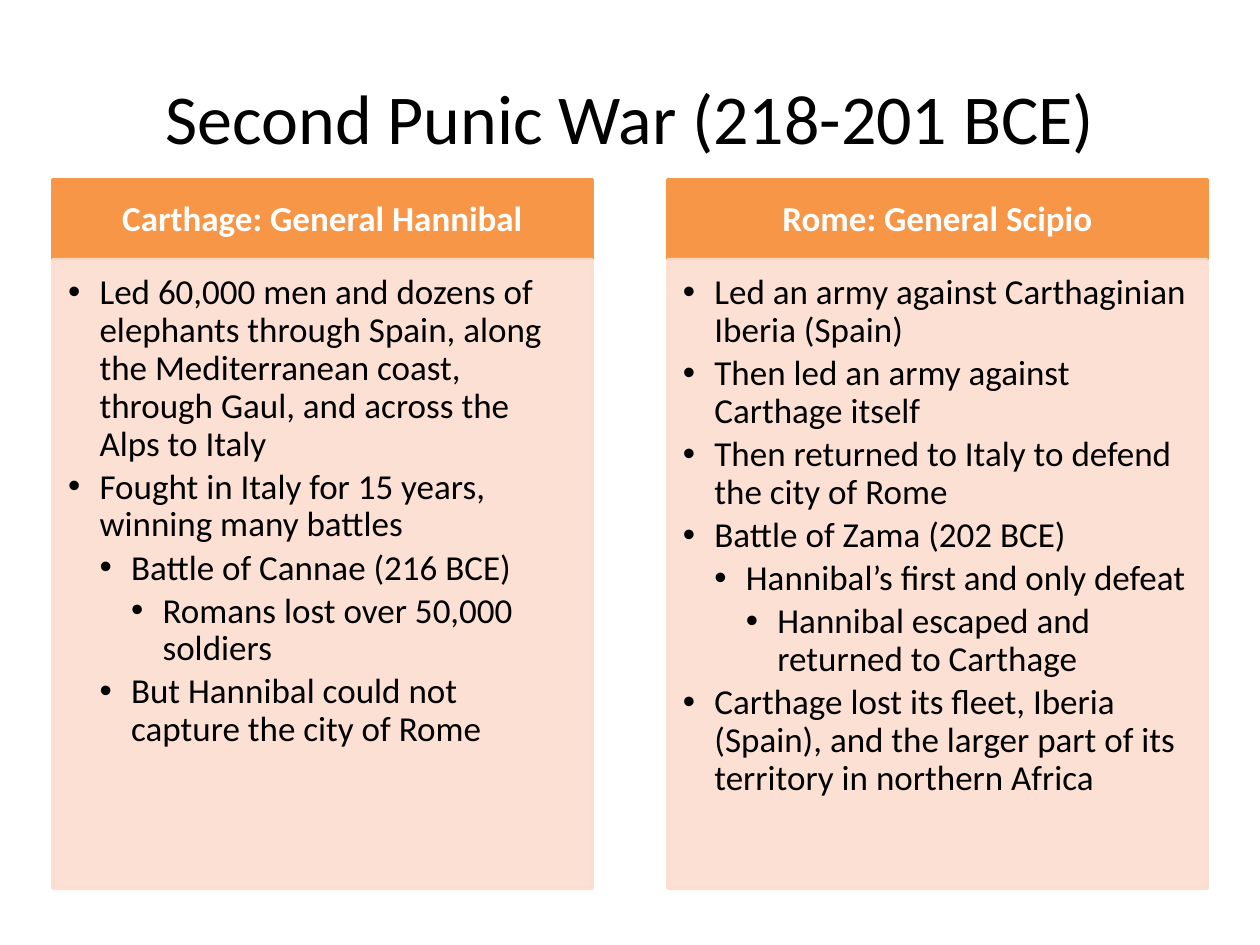
from dataclasses import dataclass

from lxml.etree import SubElement
from pptx import Presentation
from pptx.dml.color import RGBColor
from pptx.enum.text import MSO_ANCHOR, MSO_AUTO_SIZE, PP_ALIGN
from pptx.oxml.ns import qn
from pptx.util import Inches, Pt

COLORS = {"header": "F79646", "panel": "FCDDCF", "ink": "000000", "white": "FFFFFF"}
COLUMN_LEFT, COLUMN_PITCH, COLUMN_WIDTH = 0.42, 4.88, 4.28
HEADER_TOP, HEADER_HEIGHT, PANEL_HEIGHT = 1.43, 0.63, 4.99
INDENT = 0.25


@dataclass(frozen=True)
class Side:
    heading: str
    points: tuple[tuple[int, str], ...]  # (level, text)


SIDES = (
    Side("Carthage: General Hannibal", (
        (0, "Led 60,000 men and dozens of elephants through Spain, along the "
            "Mediterranean coast, through Gaul, and across the Alps to Italy"),
        (0, "Fought in Italy for 15 years, winning many battles"),
        (1, "Battle of Cannae (216 BCE)"),
        (2, "Romans lost over 50,000 soldiers"),
        (1, "But Hannibal could not capture the city of Rome"),
    )),
    Side("Rome: General Scipio", (
        (0, "Led an army against Carthaginian Iberia (Spain)"),
        (0, "Then led an army against Carthage itself"),
        (0, "Then returned to Italy to defend the city of Rome"),
        (0, "Battle of Zama (202 BCE)"),
        (1, "Hannibal’s first and only defeat"),
        (2, "Hannibal escaped and returned to Carthage"),
        (0, "Carthage lost its fleet, Iberia (Spain), and the larger part of "
            "its territory in northern Africa"),
    )),
)


def set_all(target, values: dict) -> None:
    for name, value in values.items():
        setattr(target, name, value)


def place(box, left: float, top: float, width: float, height: float) -> None:
    set_all(box, {"left": Inches(left), "top": Inches(top),
                  "width": Inches(width), "height": Inches(height)})


def set_frame(box, anchor: MSO_ANCHOR, margins: tuple[float, ...]) -> None:
    """Margins run left, top, right, bottom."""
    sides = ("margin_left", "margin_top", "margin_right", "margin_bottom")
    set_all(box.text_frame, {
        "auto_size": MSO_AUTO_SIZE.NONE, "word_wrap": True, "vertical_anchor": anchor,
        **{side: Inches(margin) for side, margin in zip(sides, margins)}})


def paint(box, color: str, opacity: int = 100) -> None:
    box.fill.solid()
    box.fill.fore_color.rgb = RGBColor.from_string(COLORS[color])
    box.line.color.rgb = RGBColor.from_string(COLORS[color])
    box.line.width = Pt(2)
    if opacity < 100:
        for tint in box._element.spPr.iter(qn("a:srgbClr")):
            SubElement(tint, qn("a:alpha"), val=str(opacity * 1000))


def write(para, text: str, size: int, color: str, bold: bool = False) -> None:
    span = para.add_run()
    span.text = text
    set_all(span.font, {"name": "Calibri", "size": Pt(size), "bold": bold})
    span.font.color.rgb = RGBColor.from_string(COLORS[color])


def add_bullet(para, level: int) -> None:
    properties = para._p.get_or_add_pPr()
    properties.set("marL", str(Inches(INDENT * (level + 1))))
    properties.set("indent", str(Inches(-INDENT)))
    SubElement(properties, qn("a:buFont"), typeface="Arial")
    SubElement(properties, qn("a:buChar"), char="•")


def draw_side(header, panel, side: Side, left: float) -> None:
    place(header, left, HEADER_TOP, COLUMN_WIDTH, HEADER_HEIGHT)
    paint(header, "header")
    set_frame(header, MSO_ANCHOR.MIDDLE, (0.16, 0.09, 0.16, 0.09))
    para = header.text_frame.paragraphs[0]
    set_all(para, {"alignment": PP_ALIGN.CENTER, "line_spacing": 0.9, "space_before": Pt(0)})
    write(para, side.heading, 20, "white", bold=True)

    place(panel, left, HEADER_TOP + HEADER_HEIGHT, COLUMN_WIDTH, PANEL_HEIGHT)
    paint(panel, "panel", opacity=90)
    set_frame(panel, MSO_ANCHOR.TOP, (0.12, 0.12, 0.16, 0.17))
    frame = panel.text_frame
    for number, (level, text) in enumerate(side.points):
        para = frame.add_paragraph() if number else frame.paragraphs[0]
        set_all(para, {"level": level, "line_spacing": 0.9,
                       "space_before": Pt(0), "space_after": Pt(3)})
        add_bullet(para, level)
        write(para, text, 20, "ink")


def main() -> None:
    deck = Presentation()
    set_all(deck, {"slide_width": Inches(10), "slide_height": Inches(7.5)})
    page = deck.slides.add_slide(deck.slide_layouts.get_by_name("Comparison"))

    title = page.shapes.title
    place(title, 0.5, 0.3, 9, 1.25)
    set_frame(title, MSO_ANCHOR.MIDDLE, (0.1, 0.05, 0.1, 0.05))
    para = title.text_frame.paragraphs[0]
    para.alignment = PP_ALIGN.CENTER
    write(para, "Second Punic War (218-201 BCE)", 40, "ink")

    for number, side in enumerate(SIDES):
        header = page.placeholders[1 + 2 * number]
        panel = page.placeholders[2 + 2 * number]
        draw_side(header, panel, side, COLUMN_LEFT + number * COLUMN_PITCH)

    deck.save("out.pptx")


if __name__ == "__main__":
    main()
